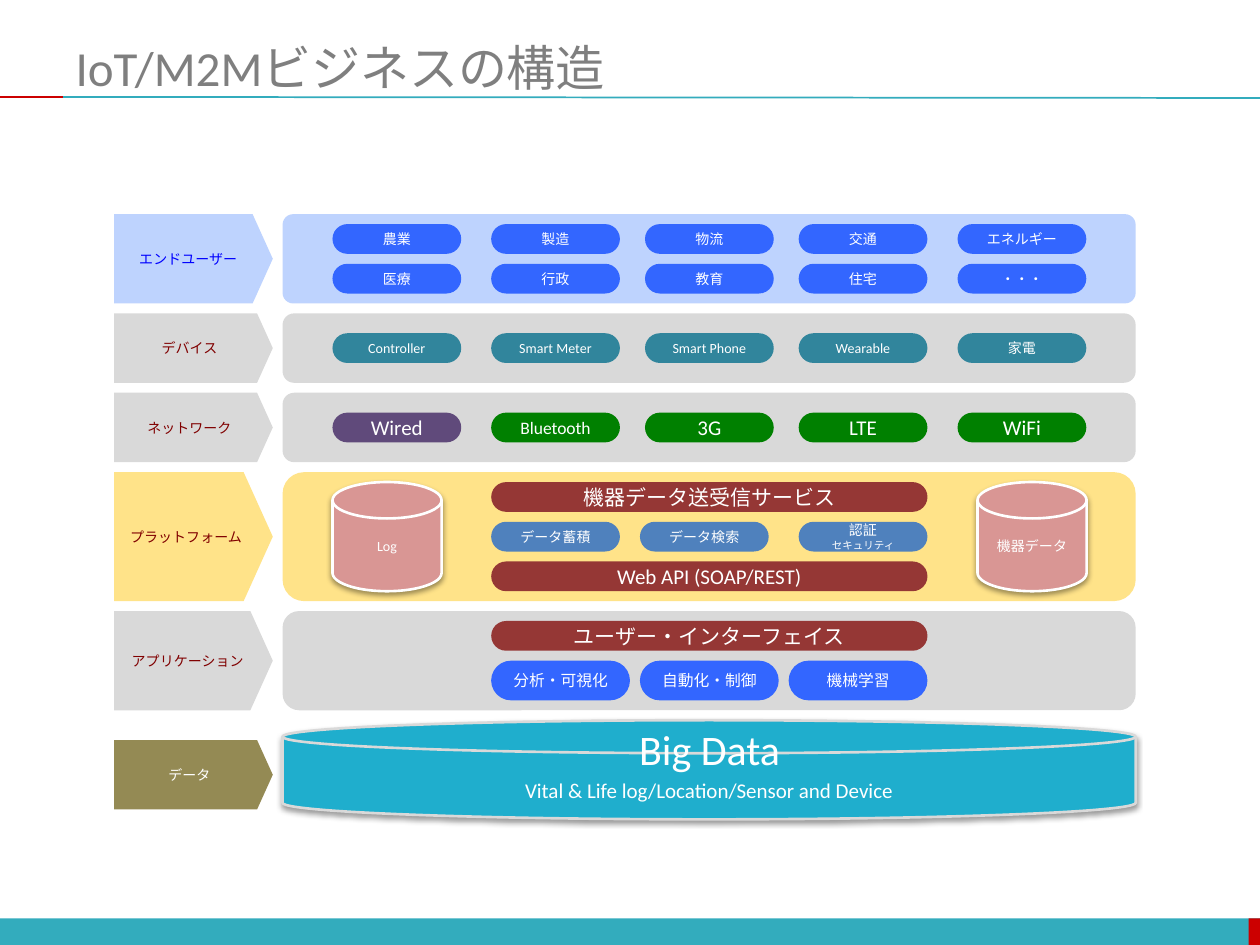
import dataclasses

import lxml.etree
import pptx
import pptx.dml.color
import pptx.enum.shapes
import pptx.enum.text
import pptx.oxml.ns
import pptx.util

Pt = pptx.util.Pt
SHAPE = pptx.enum.shapes.MSO_SHAPE
ANCHOR = pptx.enum.text.MSO_ANCHOR
ALIGN = pptx.enum.text.PP_ALIGN


@dataclasses.dataclass(frozen=True)
class Theme:
    font: str = "Calibri"
    title_size: float = 28
    headline: float = 24
    large: float = 12
    medium: float = 10
    action: float = 9
    small: float = 8
    tiny: float = 6
    white: str = "FFFFFF"
    title: str = "7F7F7F"
    teal: str = "33ACBD"
    red: str = "CC0000"
    grey: str = "D9D9D9"
    pale_blue: str = "BED3FE"
    yellow: str = "FFE389"
    olive: str = "948A54"
    blue: str = "3366FF"
    steel: str = "4F81BD"
    device: str = "31859C"
    wired: str = "604A7B"
    wireless: str = "008000"
    service: str = "953735"
    store: str = "D99694"
    big_data: str = "1FAECD"
    user_label: str = "0000FF"
    label: str = "800000"


def rgb(value):
    return pptx.dml.color.RGBColor.from_string(value)


def assign(target, values):
    for key, value in values.items():
        setattr(target, key, value)


class Board:
    TIGHT = dict(margin_left=0, margin_right=0, margin_top=0, margin_bottom=0,
                 word_wrap=True, vertical_anchor=ANCHOR.MIDDLE)

    def __init__(self, slide, theme):
        self.slide = slide
        self.theme = theme

    def place(self, shape, box):
        assign(shape, dict(zip(("left", "top", "width", "height"), map(Pt, box))))

    def add_lines(self, frame, lines, color, align=ALIGN.CENTER):
        for index, (text, size) in enumerate(lines):
            paragraph = frame.paragraphs[0] if index == 0 else frame.add_paragraph()
            paragraph.alignment = align
            run = paragraph.add_run()
            run.text = text
            assign(run.font, dict(name=self.theme.font, size=Pt(size)))
            run.font.color.rgb = rgb(color)

    def title(self, text, box):
        title = self.slide.shapes.title
        self.place(title, box)
        frame = title.text_frame
        assign(frame, dict(auto_size=pptx.enum.text.MSO_AUTO_SIZE.NONE,
                           vertical_anchor=ANCHOR.MIDDLE))
        self.add_lines(frame, [(text, self.theme.title_size)], self.theme.title, ALIGN.LEFT)

    def block(self, kind, box, fill, lines=(), color=Theme.white, corner=None):
        shape = self.slide.shapes.add_shape(kind, *map(Pt, box))
        shape.shadow.inherit = False
        shape.fill.solid()
        shape.fill.fore_color.rgb = rgb(fill)
        shape.line.fill.background()
        if corner is not None:
            shape.adjustments[0] = corner
        if lines:
            assign(shape.text_frame, self.TIGHT)
            self.add_lines(shape.text_frame, lines, color)
        return shape

    def pill(self, box, fill, *lines):
        self.block(SHAPE.ROUNDED_RECTANGLE, box, fill, lines, corner=0.5)

    def disk(self, box, fill, edge, line, anchor=ANCHOR.MIDDLE):
        disk = self.block(SHAPE.FLOWCHART_MAGNETIC_DISK, box, fill, [line])
        disk.text_frame.vertical_anchor = anchor
        disk.line.color.rgb = rgb(edge)
        disk.line.width = Pt(1.5)
        qn = pptx.oxml.ns.qn
        effects = disk.element.spPr.find(qn("a:effectLst"))
        shadow = lxml.etree.SubElement(
            effects, qn("a:outerShdw"), blurRad=str(Pt(3.1)), dist=str(Pt(1.6)),
            dir="5400000", rotWithShape="0")
        black = lxml.etree.SubElement(shadow, qn("a:srgbClr"), val="000000")
        lxml.etree.SubElement(black, qn("a:alpha"), val="38000")

    def caption(self, box, text, size):
        caption = self.slide.shapes.add_textbox(*map(Pt, box))
        caption.text_frame.word_wrap = False
        self.add_lines(caption.text_frame, [(text, size)], self.theme.white)

    def rule(self, start, end, color):
        rule = self.slide.shapes.add_connector(
            pptx.enum.shapes.MSO_CONNECTOR.STRAIGHT, *map(Pt, start + end))
        rule.line.color.rgb = rgb(color)
        rule.line.width = Pt(1)
        lxml.etree.SubElement(rule.element.spPr, pptx.oxml.ns.qn("a:effectLst"))


def main():
    theme = Theme()
    deck = pptx.Presentation()
    assign(deck, dict(slide_width=Pt(720), slide_height=Pt(540)))
    board = Board(deck.slides.add_slide(deck.slide_layouts[5]), theme)

    board.block(SHAPE.RECTANGLE, (0, 524.8, 720, 15.6), theme.teal)
    board.block(SHAPE.RECTANGLE, (713.5, 524.8, 7, 15.6), theme.red)
    board.rule((36, 55.4), (720, 56), theme.teal)
    board.rule((0, 55.4), (36, 55.4), theme.red)
    board.title("IoT/M2Mビジネスの構造", (36, 21.8, 684, 33))

    unit = 5.67
    label_left, label_width = 65.2, 90.7
    panel_left, panel_width = 161.5, 487.5
    columns = (190, 280.7, 368.6, 456.4, 547.2)
    pill_width, pill_height = 73.6, 3 * unit
    wide = columns[3] + pill_width - columns[1]

    layers = (
        ("エンドユーザー", 9, theme.pale_blue, theme.user_label, 0.119),
        ("デバイス", 7, theme.grey, theme.label, None),
        ("ネットワーク", 7, theme.grey, theme.label, None),
        ("プラットフォーム", 13, theme.yellow, theme.label, None),
        ("アプリケーション", 10, theme.grey, theme.label, None),
    )

    def label(text, top, height, fill, color):
        board.block(SHAPE.PENTAGON, (label_left, top, label_width, height), fill,
                    [(text, theme.small)], color, 0.226)

    tops = []
    top = 122.4
    for name, units, fill, color, corner in layers:
        height = units * unit
        board.block(SHAPE.ROUNDED_RECTANGLE, (panel_left, top, panel_width, height),
                    fill, corner=corner)
        label(name, top, height, fill, color)
        tops.append(top)
        top += height + unit
    users, devices, network, platform, application = tops
    data = top

    same_size = (theme.small,) * 5
    pill_rows = (
        (users + unit, ("農業", "製造", "物流", "交通", "エネルギー"),
         same_size, (theme.blue,) * 5),
        (users + 5 * unit, ("医療", "行政", "教育", "住宅", "・・・"),
         same_size, (theme.blue,) * 5),
        (devices + 2 * unit,
         ("Controller", "Smart Meter", "Smart Phone", "Wearable", "家電"),
         same_size, (theme.device,) * 5),
        (network + 2 * unit, ("Wired", "Bluetooth", "3G", "LTE", "WiFi"),
         (theme.large, theme.medium) + (theme.large,) * 3,
         (theme.wired,) + (theme.wireless,) * 4),
    )
    for row_top, names, sizes, fills in pill_rows:
        for left, name, size, fill in zip(columns, names, sizes, fills):
            board.pill((left, row_top, pill_width, pill_height), fill, (name, size))

    for bar_top, service in (
        (platform + unit, "機器データ送受信サービス"),
        (platform + 9 * unit, "Web API (SOAP/REST)"),
        (application + unit, "ユーザー・インターフェイス"),
    ):
        board.pill((columns[1], bar_top, wide, pill_height), theme.service,
                   (service, theme.large))

    functions = (
        (columns[1], [("データ蓄積", theme.small)]),
        (365.7, [("データ検索", theme.small)]),
        (columns[3], [("認証", theme.small), ("セキュリティ", theme.tiny)]),
    )
    for left, lines in functions:
        board.pill((left, platform + 5 * unit, pill_width, pill_height),
                   theme.steel, *lines)

    store = 11 * unit
    for left, name in ((columns[0], "Log"), (558.6, "機器データ")):
        board.disk((left, platform + unit, store, store), theme.store, theme.white,
                   (name, theme.small))

    action_width = (wide - 2 * unit) / 3
    for index, action in enumerate(("分析・可視化", "自動化・制御", "機械学習")):
        board.pill((columns[1] + index * (action_width + unit), application + 5 * unit,
                    action_width, 4 * unit), theme.blue, (action, theme.action))

    board.disk((panel_left, data, panel_width, 10 * unit), theme.big_data, theme.grey,
               ("Vital & Life log/Location/Sensor and Device", theme.large), ANCHOR.BOTTOM)
    board.caption((347.5, 409.7, 116, 36), "Big Data", theme.headline)
    label("データ", data + 2 * unit, 7 * unit, theme.olive, theme.white)

    deck.save("out.pptx")


if __name__ == "__main__":
    main()
